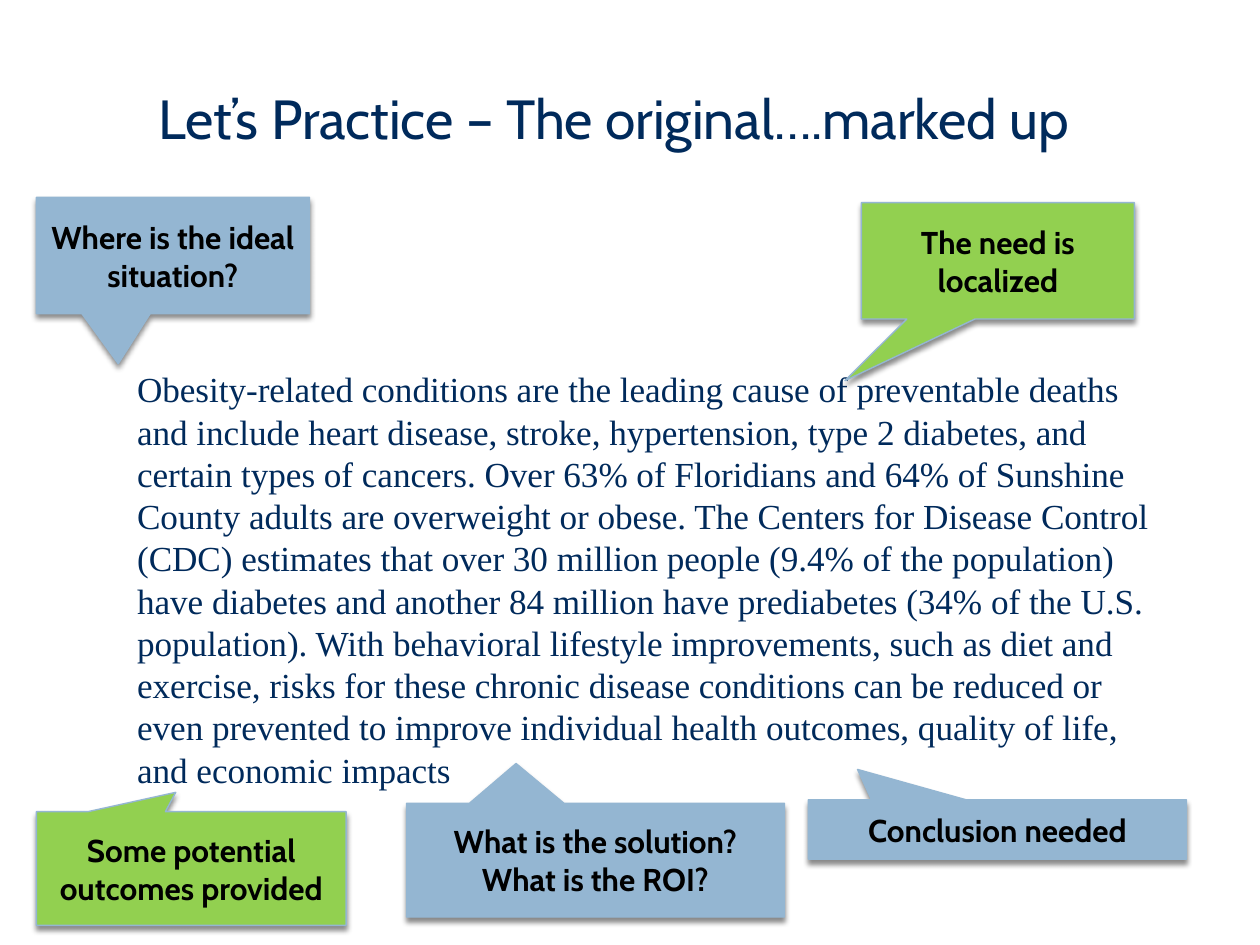
from lxml import etree
from pptx import Presentation
from pptx.dml.color import RGBColor
from pptx.enum.shapes import MSO_SHAPE
from pptx.enum.text import MSO_ANCHOR, PP_ALIGN
from pptx.oxml.ns import qn
from pptx.util import Pt

CALLOUT = MSO_SHAPE.RECTANGULAR_CALLOUT
MIDDLE, TOP = MSO_ANCHOR.MIDDLE, MSO_ANCHOR.TOP
LEFT, CENTER = PP_ALIGN.LEFT, PP_ALIGN.CENTER

THEME = {
    "navy": RGBColor.from_string("002A5B"),
    "black": RGBColor.from_string("000000"),
    "blue": RGBColor.from_string("94B6D2"),
    "green": RGBColor.from_string("92D050"),
    "shade": "000000",
    "title": {"name": "Cabin", "size": Pt(31.5)},
    "body": {"name": "Times New Roman", "size": Pt(20.1)},
    "label": {"name": "Cabin", "size": Pt(18), "bold": True},
}

STORY = (
    "Obesity-related conditions are the leading cause of preventable deaths "
    "and include heart disease, stroke, hypertension, type 2 diabetes, and "
    "certain types of cancers. Over 63% of Floridians and 64% of Sunshine "
    "County adults are overweight or obese. The Centers for Disease Control "
    "(CDC) estimates that over 30 million people (9.4% of the population) "
    "have diabetes and another 84 million have prediabetes (34% of the U.S. "
    "population). With behavioral lifestyle improvements, such as diet and "
    "exercise, risks for these chronic disease conditions can be reduced or "
    "even prevented to improve individual health outcomes, quality of life, "
    "and economic impacts"
)

NOTES = [
    ("Where is the ideal situation?", "blue",
     (20.8, 112.8, 156, 66.5), (-0.2, 0.93)),
    ("What is the solution?\nWhat is the ROI?", "blue",
     (232.3, 459, 216, 65), (-0.21, -0.85)),
    ("Conclusion needed", "blue",
     (462, 457, 216, 34), (-0.37, -1.01)),
    ("The need is localized", "green",
     (492.2, 115.8, 156, 66.5), (-0.56, 1.03)),
    ("Some potential outcomes provided", "green",
     (20.8, 463.8, 177, 65), (-0.05, -0.67)),
]


class Deck:
    def __init__(self, theme):
        self.theme = theme
        self.file = Presentation()
        self.file.slide_width, self.file.slide_height = Pt(720), Pt(540)
        self.slide = self.file.slides.add_slide(self.file.slide_layouts[6])

    def label(self, shape, text, style, color, anchor, align, pitch=None):
        frame = shape.text_frame
        frame.word_wrap = True
        frame.vertical_anchor = anchor
        frame.text = text
        for para in frame.paragraphs:
            para.alignment = align
            if pitch:
                para.line_spacing = Pt(pitch)
            for key, value in self.theme[style].items():
                setattr(para.font, key, value)
            para.font.color.rgb = self.theme[color]

    def text(self, text, box, style, anchor, pitch=None):
        shape = self.slide.shapes.add_textbox(*map(Pt, box))
        self.label(shape, text, style, "navy", anchor, LEFT, pitch)

    def shadow(self, shape):
        shape.shadow.inherit = False
        effects = shape._element.spPr.find(qn("a:effectLst"))
        outer = etree.SubElement(
            effects, qn("a:outerShdw"), blurRad=str(Pt(3)),
            dist=str(Pt(2.4)), dir="5400000", rotWithShape="0")
        color = etree.SubElement(
            outer, qn("a:srgbClr"), val=self.theme["shade"])
        etree.SubElement(color, qn("a:alpha"), val="45000")

    def note(self, text, fill, box, tip):
        shape = self.slide.shapes.add_shape(CALLOUT, *map(Pt, box))
        for index, value in enumerate(tip):
            shape.adjustments[index] = value
        shape.fill.solid()
        shape.fill.fore_color.rgb = self.theme[fill]
        shape.line.color.rgb = self.theme["blue"]
        shape.line.width = Pt(0.79)
        self.shadow(shape)
        self.label(shape, text, "label", "black", MIDDLE, CENTER)


def main():
    deck = Deck(THEME)
    deck.text("Let’s Practice – The original….marked up",
              (83.5, 18, 606, 98), "title", MIDDLE)
    deck.text(STORY, (71.3, 206.5, 606, 258), "body", TOP, 24.15)
    for note in NOTES:
        deck.note(*note)
    deck.file.save("out.pptx")


if __name__ == "__main__":
    main()
